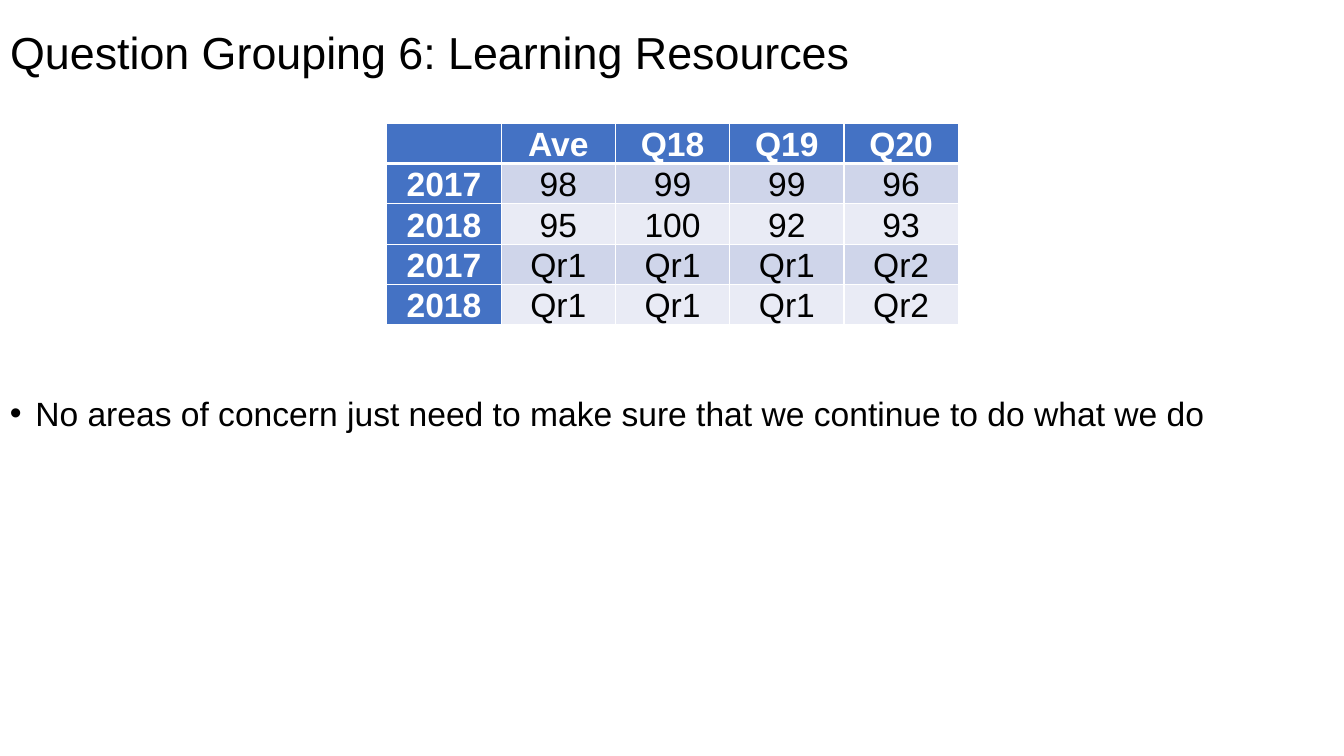
import lxml.etree
import pptx
import pptx.dml.color
import pptx.enum.text
import pptx.oxml.ns
import pptx.util

Cm = pptx.util.Cm
Pt = pptx.util.Pt
qn = pptx.oxml.ns.qn

SLIDE_WIDTH = Cm(33.87)
BLUE = "4472C4"
BAND_COLORS = ["E9EBF5", "CFD5EA"]
ROWS = [
    ["", "Ave", "Q18", "Q19", "Q20"],
    ["2017", "98", "99", "99", "96"],
    ["2018", "95", "100", "92", "93"],
    ["2017", "Qr1", "Qr1", "Qr1", "Qr2"],
    ["2018", "Qr1", "Qr1", "Qr1", "Qr2"],
]


def rgb(color):
    return pptx.dml.color.RGBColor.from_string(color)


def format_font(font, size, color, bold=False):
    font.name = "Arial"
    font.size = Pt(size)
    font.bold = bold
    font.color.rgb = rgb(color)


presentation = pptx.Presentation()
presentation.slide_width = SLIDE_WIDTH
presentation.slide_height = Cm(19.05)
slide = presentation.slides.add_slide(presentation.slide_layouts[5])

# Title
title = slide.shapes.title
title.left, title.top, title.width, title.height = 0, 0, SLIDE_WIDTH, Cm(2.77)
title.text_frame.text = "Question Grouping 6: Learning Resources"
title.text_frame.auto_size = pptx.enum.text.MSO_AUTO_SIZE.NONE
title.text_frame.vertical_anchor = pptx.enum.text.MSO_ANCHOR.MIDDLE
paragraph = title.text_frame.paragraphs[0]
paragraph.alignment = pptx.enum.text.PP_ALIGN.LEFT
paragraph.line_spacing = 0.9
format_font(paragraph.runs[0].font, 32, "000000")

# Bulleted remark, set below the table by the top margin
remark = slide.shapes.add_textbox(0, Cm(3.1), SLIDE_WIDTH, Cm(15.39))
remark.text_frame.word_wrap = True
remark.text_frame.margin_top = Cm(6.91)
remark.text_frame.text = (
    "No areas of concern just need to make sure that we continue to do what we do"
)
paragraph = remark.text_frame.paragraphs[0]
paragraph.line_spacing = 0.9
format_font(paragraph.runs[0].font, 24, "000000")
properties = paragraph._p.get_or_add_pPr()
properties.set("marL", str(Cm(0.64)))
properties.set("indent", str(-Cm(0.64)))
lxml.etree.SubElement(properties, qn("a:buFont"), typeface="Arial")
lxml.etree.SubElement(properties, qn("a:buChar"), char="•")

# Score table
table = slide.shapes.add_table(
    len(ROWS), len(ROWS[0]), Cm(9.75), Cm(3.1), Cm(14.4), Cm(4.7)
).table
for column in table.columns:
    column.width = Cm(2.88)
for row in table.rows:
    row.height = Cm(0.94)

for row_index, values in enumerate(ROWS):
    for column_index, value in enumerate(values):
        cell = table.cell(row_index, column_index)
        is_header = row_index == 0 or column_index == 0
        cell.margin_left = cell.margin_right = Cm(0.18)
        cell.margin_top = cell.margin_bottom = 0
        cell.vertical_anchor = pptx.enum.text.MSO_ANCHOR.BOTTOM
        cell.text_frame.text = value
        paragraph = cell.text_frame.paragraphs[0]
        paragraph.alignment = pptx.enum.text.PP_ALIGN.CENTER
        format_font(paragraph.font, 24, "FFFFFF" if is_header else "000000", is_header)
        for run in paragraph.runs:
            format_font(run.font, 24, "FFFFFF" if is_header else "000000", is_header)

        cell_properties = cell._tc.get_or_add_tcPr()
        for side in ["lnL", "lnR", "lnT", "lnB"]:
            below_header = (row_index, side) in [(0, "lnB"), (1, "lnT")]
            border = lxml.etree.SubElement(
                cell_properties, qn("a:" + side), w=str(Pt(3 if below_header else 1))
            )
            border_fill = lxml.etree.SubElement(border, qn("a:solidFill"))
            lxml.etree.SubElement(border_fill, qn("a:srgbClr"), val="FFFFFF")
        cell.fill.solid()
        cell.fill.fore_color.rgb = rgb(BLUE if is_header else BAND_COLORS[row_index % 2])

presentation.save("out.pptx")
